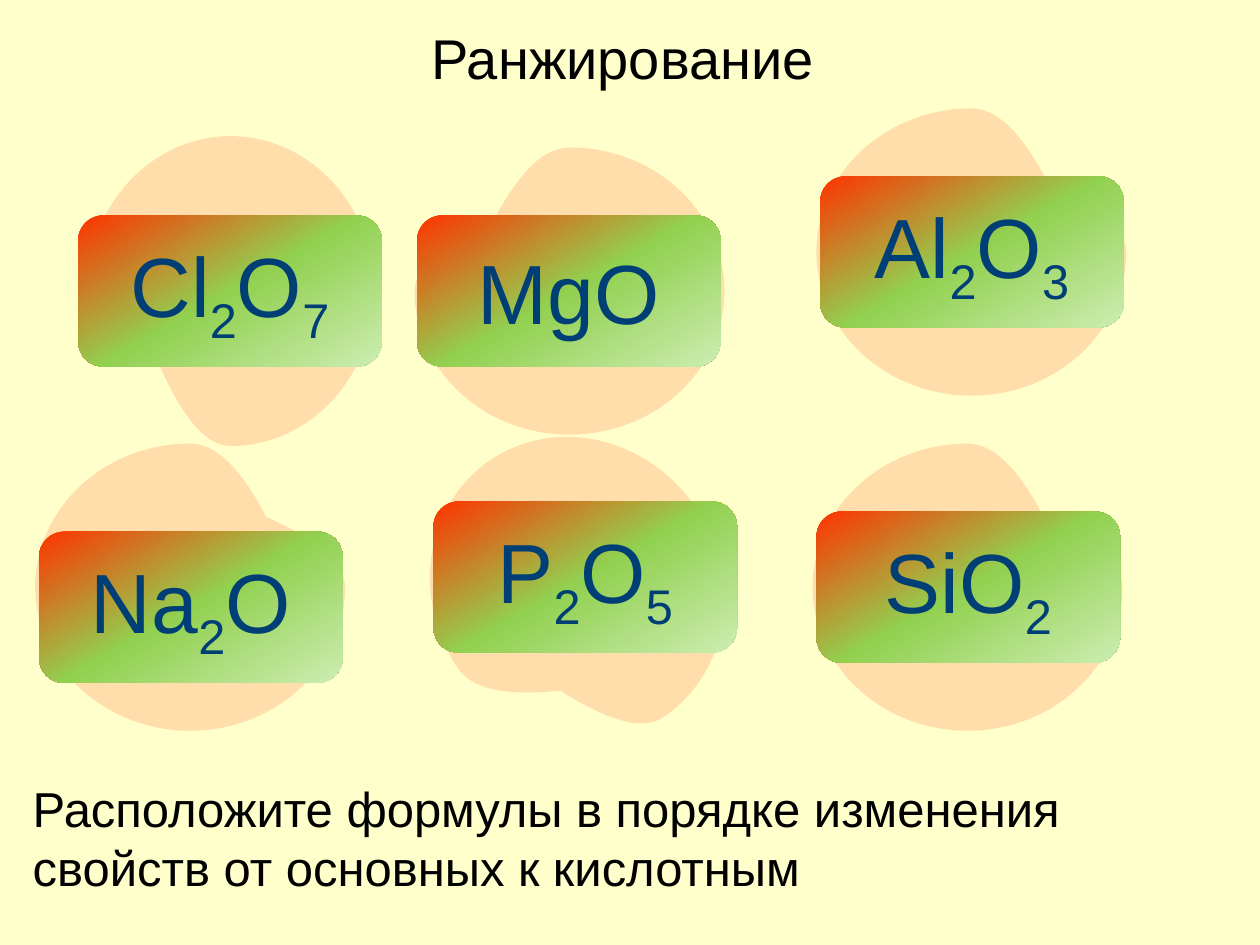
from copy import deepcopy
from itertools import groupby

from pptx import Presentation
from pptx import util as u
from pptx.dml import color
from pptx.enum import shapes, text
from pptx.oxml import ns, xmlchemy

HUES = {
    "page": "FFFFCC",
    "drop": "FF3300",
    "ink": "000000",
    "label": "003F75",
    "start": "FF3300",
    "mid": "92D050",
    "end": "CCEDB1",
}
FONT = "Arial"
CARD = (2.41, 1.2)
DROP = (2.28, 2.46)
ITEMS = [
    ("Cl2O7", (0.62, 1.71), (0.69, 1.08), 180, False),
    ("MgO", (3.31, 1.71), (3.38, 1.08), 270, False),
    ("Al2O3", (6.51, 1.4), (6.57, 0.77), 90, True),
    ("Na2O", (0.31, 4.22), (0.37, 3.43), 90, True),
    ("P2O5", (3.44, 3.98), (3.44, 3.44), 146.5, False),
    ("SiO2", (6.48, 4.06), (6.54, 3.43), 90, True),
]


def hue(name):
    return color.RGBColor.from_string(HUES[name])


def add_run(para, words, size, tint):
    run = para.add_run()
    run.text = words
    run.font.name = FONT
    run.font.size = u.Pt(size)
    run.font.color.rgb = hue(tint)
    return run


def add_shape(slide, kind, box):
    shape = slide.shapes.add_shape(kind, *map(u.Inches, box))
    shape.shadow.inherit = False
    shape.line.fill.background()
    return shape


def add_drop(slide, box, turn, flip):
    drop = add_shape(slide, shapes.MSO_SHAPE.TEAR, box)
    drop.adjustments[0] = 0.49
    drop.rotation = turn
    drop.fill.solid()
    drop.fill.fore_color.rgb = hue("drop")
    tint = drop._element.spPr.find(ns.qn("a:solidFill"))[0]
    alpha = xmlchemy.OxmlElement("a:alpha")
    alpha.set("val", "16000")
    tint.append(alpha)
    if flip:
        drop._element.spPr.find(ns.qn("a:xfrm")).set("flipH", "1")


def add_card(slide, box, name):
    card = add_shape(slide, shapes.MSO_SHAPE.ROUNDED_RECTANGLE, box)
    card.fill.gradient()
    card.fill.gradient_angle = 300
    stops = card._element.spPr.find(ns.qn("a:gradFill")).find(ns.qn("a:gsLst"))
    stops.append(deepcopy(stops[0]))
    marks = zip(card.fill.gradient_stops, (0, 0.5, 1), ("start", "mid", "end"))
    for stop, place, tint in marks:
        stop.position = place
        stop.color.rgb = hue(tint)

    frame = card.text_frame
    frame.word_wrap = False
    frame.vertical_anchor = text.MSO_ANCHOR.MIDDLE
    para = frame.paragraphs[0]
    para.alignment = text.PP_ALIGN.CENTER
    for low, part in groupby(name, str.isdigit):
        run = add_run(para, "".join(part), 48, "label")
        if low:
            run.font._element.set("baseline", "-25000")


def fill_holder(holder, box, words, size, align):
    holder.left, holder.top, holder.width, holder.height = map(u.Inches, box)
    frame = holder.text_frame
    frame.word_wrap = True
    frame.vertical_anchor = text.MSO_ANCHOR.MIDDLE
    para = frame.paragraphs[0]
    para.alignment = align
    para.space_before = u.Pt(0)
    add_run(para, words, size, "ink")
    props = para._p.get_or_add_pPr()
    props.set("marL", "0")
    props.set("indent", "0")
    props.append(xmlchemy.OxmlElement("a:buNone"))


def main():
    deck = Presentation()
    deck.slide_width = u.Inches(10)
    deck.slide_height = u.Inches(7.5)
    slide = deck.slides.add_slide(deck.slide_layouts[1])
    slide.background.fill.solid()
    slide.background.fill.fore_color.rgb = hue("page")

    fill_holder(slide.shapes.title, (1.46, 0, 7.09, 0.91),
                "Ранжирование ", 32, text.PP_ALIGN.CENTER)
    fill_holder(slide.placeholders[1], (0.16, 6.02, 9, 1.25),
                "Расположите формулы в порядке изменения свойств "
                "от основных к кислотным", 28, text.PP_ALIGN.LEFT)
    for name, spot, back, turn, flip in ITEMS:
        add_drop(slide, back + DROP, turn, flip)
        add_card(slide, spot + CARD, name)
    deck.save("out.pptx")


if __name__ == "__main__":
    main()
